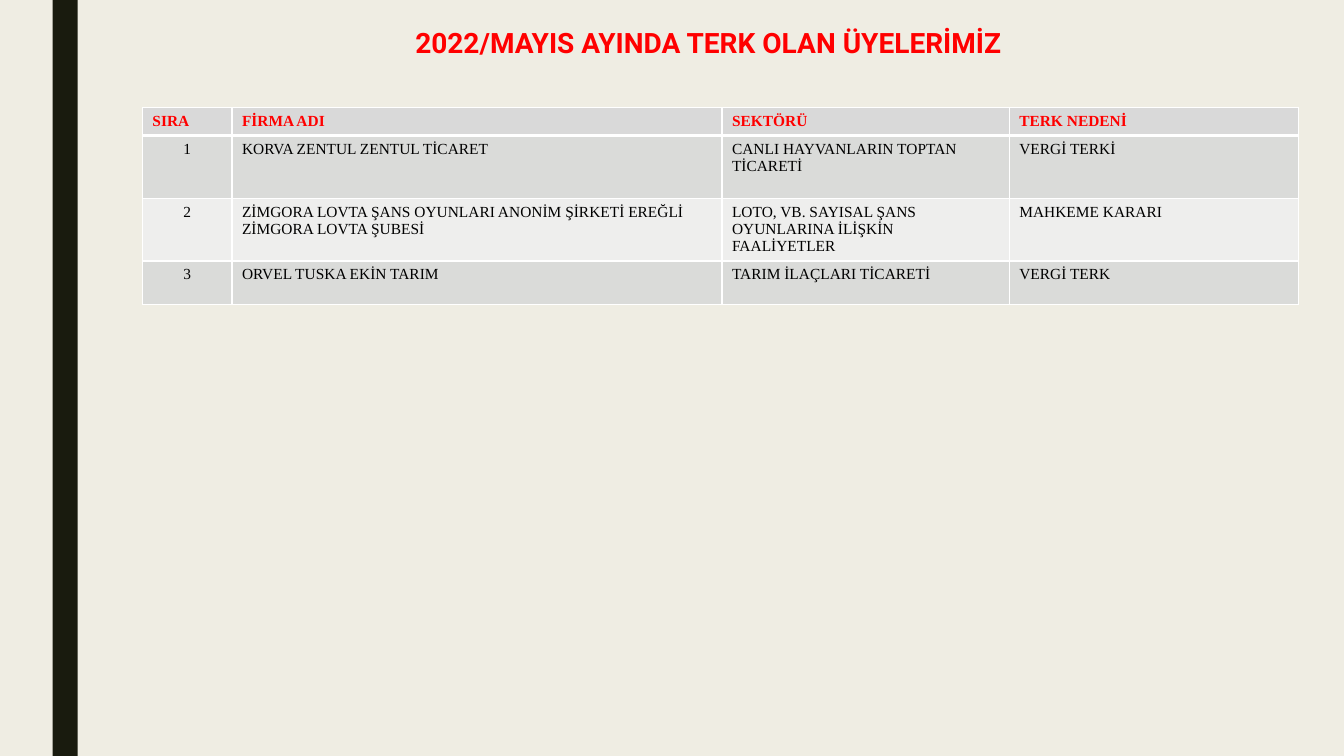
import dataclasses

import pptx
import pptx.dml.color
import pptx.enum.shapes
import pptx.enum.text
import pptx.oxml
import pptx.oxml.ns
import pptx.util

Pt = pptx.util.Pt
ALIGN = pptx.enum.text.PP_ALIGN

SLIDE_WIDTH, SLIDE_HEIGHT = 960, 540
RED, BLACK, WHITE = "FF0000", "000000", "FFFFFF"
COLUMN_WIDTHS = (64, 350, 205.2, 206.6)
THIN, THICK = 1, 3


@dataclasses.dataclass(frozen=True)
class MemberRow:
    texts: tuple[str, str, str, str]
    height: float
    fill: str
    color: str = BLACK
    bold: bool = False
    number_align: ALIGN = ALIGN.CENTER
    top_border: float = THIN
    bottom_border: float = THIN


MEMBER_ROWS = (
    MemberRow(("SIRA", "FİRMA ADI", "SEKTÖRÜ", "TERK NEDENİ"), 19.85, "D9D9D9",
              RED, True, ALIGN.LEFT, bottom_border=THICK),
    MemberRow(("1", "KORVA ZENTUL ZENTUL TİCARET",
               "CANLI HAYVANLARIN TOPTAN TİCARETİ", "VERGİ TERKİ"),
              45, "DADBD9", top_border=THICK),
    MemberRow(("2", "ZİMGORA LOVTA ŞANS OYUNLARI ANONİM ŞİRKETİ EREĞLİ ZİMGORA LOVTA ŞUBESİ",
               "LOTO, VB. SAYISAL ŞANS OYUNLARINA İLİŞKİN FAALİYETLER", "MAHKEME KARARI"),
              44.6, "EEEEED"),
    MemberRow(("3", "ORVEL TUSKA EKİN TARIM", "TARIM İLAÇLARI TİCARETİ", "VERGİ TERK"),
              31, "DADBD9"),
)


def rgb(color: str) -> pptx.dml.color.RGBColor:
    return pptx.dml.color.RGBColor.from_string(color)


def set_font(paragraph, name: str, size: float, color: str, bold: bool) -> None:
    font = paragraph.font
    font.name, font.size, font.bold = name, Pt(size), bold
    font.color.rgb = rgb(color)


def set_fill(target, color: str) -> None:
    target.fill.solid()
    target.fill.fore_color.rgb = rgb(color)


def set_borders(cell, top: float, bottom: float) -> None:
    properties = cell._tc.get_or_add_tcPr()
    sides = (("lnL", THIN), ("lnR", THIN), ("lnT", top), ("lnB", bottom))
    for position, (side, width) in enumerate(sides):
        border = pptx.oxml.parse_xml(
            f'<a:{side} {pptx.oxml.ns.nsdecls("a")} w="{Pt(width)}">'
            f'<a:solidFill><a:srgbClr val="{WHITE}"/></a:solidFill></a:{side}>')
        properties.insert(position, border)


def add_side_bar(slide) -> None:
    bar = slide.shapes.add_shape(pptx.enum.shapes.MSO_SHAPE.RECTANGLE,
                                 Pt(37.5), 0, Pt(18), Pt(SLIDE_HEIGHT))
    bar.shadow.inherit = False
    set_fill(bar, "191B0E")
    bar.line.fill.background()


def format_title(slide) -> None:
    title = slide.shapes.title
    title.left, title.top, title.width, title.height = map(Pt, (253.4, 17.3, 505.4, 36.7))
    frame = title.text_frame
    frame.text = "2022/MAYIS AYINDA TERK OLAN ÜYELERİMİZ"
    frame.auto_size = pptx.enum.text.MSO_AUTO_SIZE.NONE
    frame.vertical_anchor = pptx.enum.text.MSO_ANCHOR.TOP
    heading = frame.paragraphs[0]
    heading.alignment = ALIGN.CENTER
    heading.line_spacing = 0.89
    set_font(heading, "Roboto", 20, RED, True)


def fill_cell(cell, text: str, row: MemberRow, align: ALIGN) -> None:
    cell.text = text
    paragraph = cell.text_frame.paragraphs[0]
    paragraph.alignment = align
    set_font(paragraph, "Times New Roman", 11, row.color, row.bold)
    set_fill(cell, row.fill)
    set_borders(cell, row.top_border, row.bottom_border)


def add_member_table(slide) -> None:
    members = slide.shapes.add_table(
        len(MEMBER_ROWS), len(COLUMN_WIDTHS), Pt(101.7), Pt(77),
        Pt(sum(COLUMN_WIDTHS)), Pt(sum(row.height for row in MEMBER_ROWS))).table
    for column, width in zip(members.columns, COLUMN_WIDTHS):
        column.width = Pt(width)
    for table_row, row in zip(members.rows, MEMBER_ROWS):
        table_row.height = Pt(row.height)
        for index, (cell, text) in enumerate(zip(table_row.cells, row.texts)):
            fill_cell(cell, text, row, ALIGN.LEFT if index else row.number_align)


def main() -> None:
    presentation = pptx.Presentation()
    presentation.slide_width = Pt(SLIDE_WIDTH)
    presentation.slide_height = Pt(SLIDE_HEIGHT)
    slide = presentation.slides.add_slide(presentation.slide_layouts.get_by_name("Title Only"))
    set_fill(slide.background, "EFEDE3")
    add_side_bar(slide)
    format_title(slide)
    add_member_table(slide)
    presentation.save("out.pptx")


if __name__ == "__main__":
    main()
